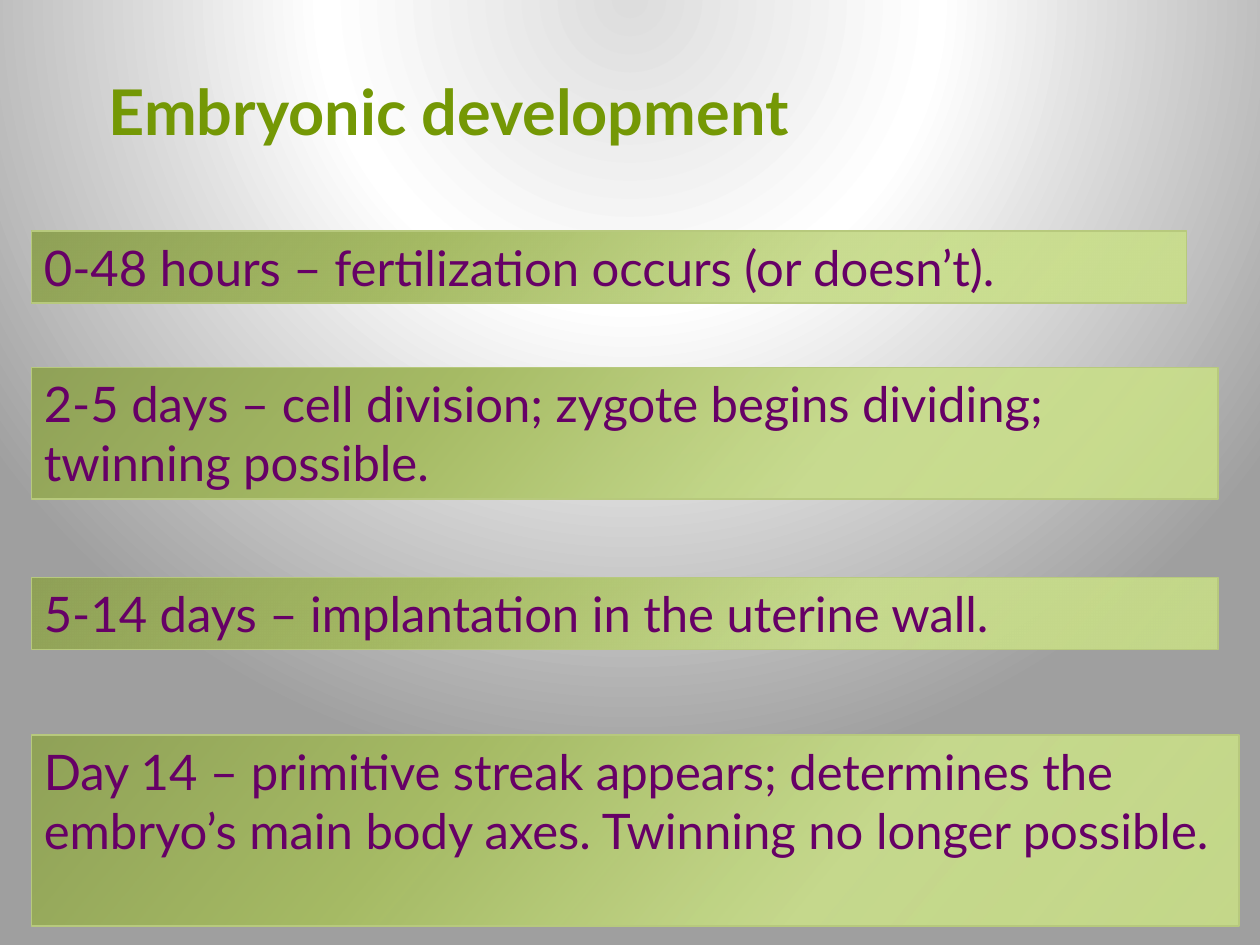
from lxml.etree import SubElement
from pptx import Presentation
from pptx.dml.color import RGBColor
from pptx.enum.shapes import MSO_SHAPE as SHAPE
from pptx.enum.text import MSO_ANCHOR as ANCHOR, MSO_AUTO_SIZE as AUTO, PP_ALIGN as ALIGN
from pptx.oxml.ns import qn
from pptx.util import Pt

GREEN = RGBColor(0x74, 0x98, 0x05)
PURPLE = RGBColor(0x66, 0x00, 0x66)
EDGE = RGBColor(0xB7, 0xC9, 0x7D)
BACKDROP = [(0, RGBColor(0xDD, 0xDD, 0xDD), 100), (39, RGBColor(0xFF, 0xFF, 0xFF), 100),
            (100, RGBColor(0x9F, 0x9F, 0x9F), 100)]
LEAF = [(0, RGBColor(0xCA, 0xE1, 0x86), 85), (33, RGBColor(0xC7, 0xDB, 0x8C), 95),
        (67, RGBColor(0xA5, 0xBA, 0x64), 100), (100, RGBColor(0x8F, 0xA1, 0x57), 100)]

TITLE = "Embryonic development"
TITLE_FONT = {"name": "Lato", "size": Pt(36), "bold": True}
STAGE_FONT = {"name": "Lato", "size": Pt(28)}
STAGE_LEFT = 18
STAGES = [
    ("0-48 hours – fertilization occurs (or doesn’t).", 132, 660, 41.2),
    ("2-5 days – cell division; zygote begins dividing; twinning possible.", 210, 678, 75),
    ("5-14 days – implantation in the uterine wall.", 330, 678, 41.2),
    ("Day 14 – primitive streak appears; determines the embryo’s main body axes. "
     "Twinning no longer possible.", 420, 690, 109),
]


def set_gradient(owner, fill, stops):
    fill.gradient()
    grad = owner._element.find(".//" + qn("a:gradFill"))
    for child in list(grad):
        grad.remove(child)
    gs_list = SubElement(grad, qn("a:gsLst"))
    for pos, color, alpha in stops:
        gs = SubElement(gs_list, qn("a:gs"), pos=str(pos * 1000))
        clr = SubElement(gs, qn("a:srgbClr"), val=str(color))
        if alpha < 100:
            SubElement(clr, qn("a:alpha"), val=str(alpha * 1000))
    return grad


def write(sp, text, font, color, anchor):
    tf = sp.text_frame
    tf.word_wrap = True
    tf.auto_size = AUTO.NONE
    tf.vertical_anchor = anchor
    p = tf.paragraphs[0]
    p.alignment = ALIGN.LEFT
    r = p.add_run()
    r.text = text
    for name, value in font.items():
        setattr(r.font, name, value)
    r.font.color.rgb = color


prs = Presentation()
prs.slide_width, prs.slide_height = Pt(720), Pt(540)
s = prs.slides.add_slide(prs.slide_layouts[5])

grad = set_gradient(s, s.background.fill, BACKDROP)
circle = SubElement(grad, qn("a:path"), path="circle")
SubElement(circle, qn("a:fillToRect"), l="50000", t="-80000", r="50000", b="180000")

title = s.shapes.title
title.left, title.top, title.width, title.height = Pt(58.5), Pt(18), Pt(445.5), Pt(70)
write(title, TITLE, TITLE_FONT, GREEN, ANCHOR.BOTTOM)
title.text_frame.margin_left = Pt(3.6)

for text, top, width, height in STAGES:
    sp = s.shapes.add_shape(SHAPE.RECTANGLE, Pt(STAGE_LEFT), Pt(top), Pt(width), Pt(height))
    sp.shadow.inherit = False
    grad = set_gradient(sp, sp.fill, LEAF)
    SubElement(grad, qn("a:lin"), ang=str(220 * 60000), scaled="0")
    sp.line.color.rgb = EDGE
    sp.line.width = Pt(1)
    write(sp, text, STAGE_FONT, PURPLE, ANCHOR.TOP)

prs.save("out.pptx")
